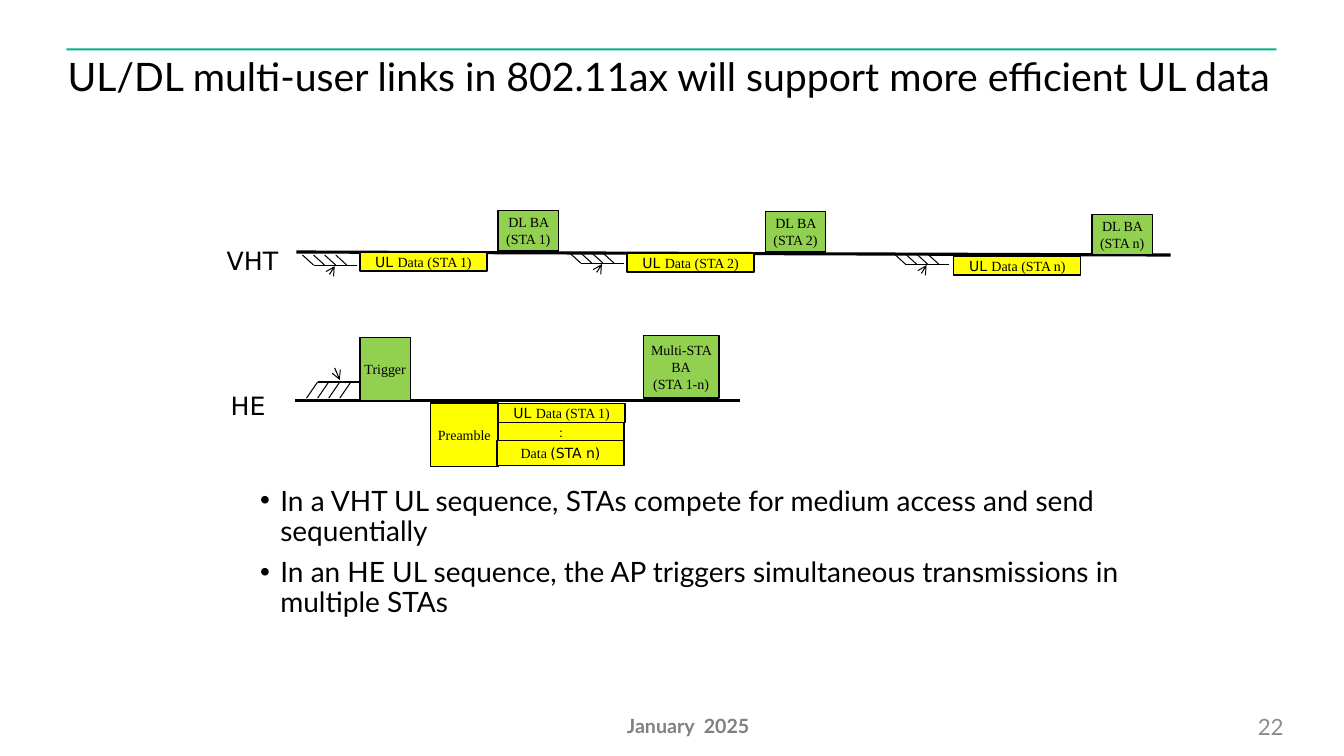
from dataclasses import dataclass

from pptx import Presentation
from pptx import util as u
from pptx.dml.color import RGBColor
from pptx.enum import dml, shapes, text
from pptx.oxml.ns import qn
from lxml import etree

PX = 9144  # EMU per px, 100 px to the inch
SANS, SERIF, LATO = "DejaVu Sans", "Times New Roman", "Lato"
BLACK, GREEN, YELLOW = "000000", "92D050", "FFFF00"


@dataclass(frozen=True)
class Run:
    words: str
    face: str = SERIF


@dataclass(frozen=True)
class Frame:
    x: int
    y: int
    width: int
    height: int
    fill: str
    lines: tuple[tuple[Run, ...], ...]


@dataclass(frozen=True)
class Contention:
    """Hatched backoff period: base line, slanted strokes and an arrow."""
    x: int
    y: int
    stroke_drop: int
    arrow_start: tuple[int, int]
    arrow_tip: tuple[int, int]


@dataclass(frozen=True)
class Exchange:
    station: str
    contention_x: int
    contention_y: int
    data_x: int
    data_y: int


@dataclass(frozen=True)
class Caption:
    x: int
    y: int
    width: int
    height: int
    words: str
    face: str
    size: int
    color: str
    bold: bool = False
    align: text.PP_ALIGN = text.PP_ALIGN.LEFT


def rgb(color: str) -> RGBColor:
    return RGBColor.from_string(color)


def px(*lengths: int) -> list[int]:
    return [u.Emu(length * PX) for length in lengths]


def style_run(run, face: str, size: int, color: str = BLACK, bold: bool = False) -> None:
    run.font.name, run.font.size, run.font.bold = face, u.Pt(size), bold
    run.font.color.rgb = rgb(color)


def fill_placeholder(holder, box: tuple[int, ...], lines: list[str], size: int) -> None:
    holder.left, holder.top, holder.width, holder.height = px(*box)
    frame = holder.text_frame
    frame.text = "\n".join(lines)
    frame.auto_size = text.MSO_AUTO_SIZE.NONE
    frame.vertical_anchor = text.MSO_ANCHOR.TOP
    frame.margin_left = frame.margin_right = frame.margin_top = frame.margin_bottom = 0
    for paragraph in frame.paragraphs:
        paragraph.alignment = text.PP_ALIGN.LEFT
        paragraph.line_spacing = 0.9
        style_run(paragraph.runs[0], LATO, size)


def add_bullet(paragraph) -> None:
    paragraph.level = 1
    paragraph.space_before = u.Pt(8)
    props = paragraph._p.get_or_add_pPr()
    props.set("marL", str(45 * PX))
    props.set("indent", str(-20 * PX))
    etree.SubElement(props, qn("a:buChar")).set("char", "•")


def draw_line(owner, start: tuple[int, int], end: tuple[int, int],
              weight: float = 0.75, arrow: bool = False) -> None:
    line = owner.add_connector(shapes.MSO_CONNECTOR.STRAIGHT, *px(*start, *end))
    line.line.color.rgb = rgb(BLACK)
    line.line.width = u.Pt(weight)
    if arrow:
        line.line.dash_style = dml.MSO_LINE.DASH
        tip = etree.SubElement(line.line._get_or_add_ln(), qn("a:tailEnd"))
        tip.set("type", "arrow")
    etree.SubElement(line._element.spPr, qn("a:effectLst"))


def draw_contention(slide, item: Contention) -> None:
    parts = slide.shapes.add_group_shape().shapes
    x, y = item.x, item.y
    draw_line(parts, (x + item.arrow_start[0], y + item.arrow_start[1]),
              (x + item.arrow_tip[0], y + item.arrow_tip[1]), arrow=True)
    draw_line(parts, (x, y), (x + 43, y))
    for top in range(x, x + 44, 11):
        draw_line(parts, (top, y), (top - 11, y + item.stroke_drop))


def draw_frame(slide, item: Frame) -> None:
    block = slide.shapes.add_shape(shapes.MSO_SHAPE.RECTANGLE,
                                   *px(item.x, item.y, item.width, item.height))
    block.shadow.inherit = False
    block.fill.solid()
    block.fill.fore_color.rgb = rgb(item.fill)
    block.line.color.rgb = rgb(BLACK)
    block.line.width = u.Pt(1)
    frame = block.text_frame
    frame.word_wrap = True
    frame.vertical_anchor = text.MSO_ANCHOR.MIDDLE
    frame.margin_left = frame.margin_right = 0
    frame.text = "\n" * (len(item.lines) - 1)
    for paragraph, runs in zip(frame.paragraphs, item.lines):
        paragraph.alignment = text.PP_ALIGN.CENTER
        for part in runs:
            run = paragraph.add_run()
            run.text = part.words
            style_run(run, part.face, 10)


def draw_caption(slide, item: Caption) -> None:
    caption = slide.shapes.add_textbox(*px(item.x, item.y, item.width, item.height))
    caption.text_frame.text = item.words
    caption.text_frame.word_wrap = item.face == LATO
    paragraph = caption.text_frame.paragraphs[0]
    paragraph.alignment = item.align
    style_run(paragraph.runs[0], item.face, item.size, item.color, item.bold)


def uplink_data(station: str) -> tuple[tuple[Run, ...], ...]:
    return ((Run("UL ", SANS), Run(f"Data (STA {station})")),)


EXCHANGES = [
    Exchange("1", 311, 263, 357, 250),
    Exchange("2", 576, 261, 622, 251),
    Exchange("n", 898, 262, 946, 254),
]
HE_FRAMES = [
    Frame(357, 335, 50, 63, GREEN, ((Run("Trigger"),),)),
    Frame(427, 400, 67, 63, YELLOW, ((Run("Preamble"),),)),
    Frame(494, 400, 126, 19, YELLOW, uplink_data("1")),
    Frame(494, 419, 125, 19, YELLOW, ((Run(":"),),)),
    Frame(493, 437, 126, 25, YELLOW, ((Run("Data "), Run("(STA n)", SANS)),)),
    Frame(638, 333, 75, 62, GREEN, ((Run("Multi-STA BA"),), (Run("(STA 1-n)"),))),
]
CAPTIONS = [
    Caption(215, 238, 72, 40, "VHT", SANS, 18, BLACK),
    Caption(219, 382, 55, 40, "HE", SANS, 18, BLACK),
    Caption(1225, 703, 58, 25, "22", LATO, 16, "8C8C8C", align=text.PP_ALIGN.RIGHT),
    Caption(612, 703, 163, 23, "January  2025", LATO, 14, "808080", bold=True),
]


def main() -> None:
    deck = Presentation()
    deck.slide_width, deck.slide_height = px(1333, 750)
    slide = deck.slides.add_slide(deck.slide_layouts[1])

    # Title, rule above it and bullet list
    title, points = slide.placeholders
    fill_placeholder(title, (67, 57, 1200, 93), [
        "UL/DL multi-user links in 802.11ax will support more efficient UL data"], 28)
    fill_placeholder(points, (233, 483, 883, 170), [
        "In a VHT UL sequence, STAs compete for medium access and send sequentially",
        "In an HE UL sequence, the AP triggers simultaneous transmissions in multiple STAs",
    ], 20)
    for paragraph in points.text_frame.paragraphs:
        add_bullet(paragraph)
    rule = slide.shapes.add_shape(shapes.MSO_SHAPE.RECTANGLE, *px(66, 48, 1200, 2))
    rule.shadow.inherit = False
    rule.fill.solid()
    rule.fill.fore_color.rgb = rgb("00B388")
    rule.line.fill.background()

    # VHT: one contention, data frame and acknowledgement per station
    draw_line(slide.shapes, (294, 250), (1161, 253), 2.25)
    for turn in EXCHANGES:
        draw_contention(slide, Contention(turn.contention_x, turn.contention_y, -10,
                                          (16, 9), (21, 1)))
        draw_frame(slide, Frame(turn.data_x, turn.data_y, 126, 19, YELLOW,
                                uplink_data(turn.station)))
        draw_frame(slide, Frame(turn.data_x + 137, turn.data_y - 41, 60, 40, GREEN,
                                ((Run(f"DL BA (STA {turn.station})"),),)))

    # HE: a single trigger starts all stations at once
    draw_contention(slide, Contention(315, 379, 16, (17, -14), (22, -2)))
    draw_line(slide.shapes, (293, 397), (734, 397), 2.25)
    for item in HE_FRAMES:
        draw_frame(slide, item)

    # Row labels, page number and date
    for item in CAPTIONS:
        draw_caption(slide, item)
    deck.save("out.pptx")


if __name__ == "__main__":
    main()
